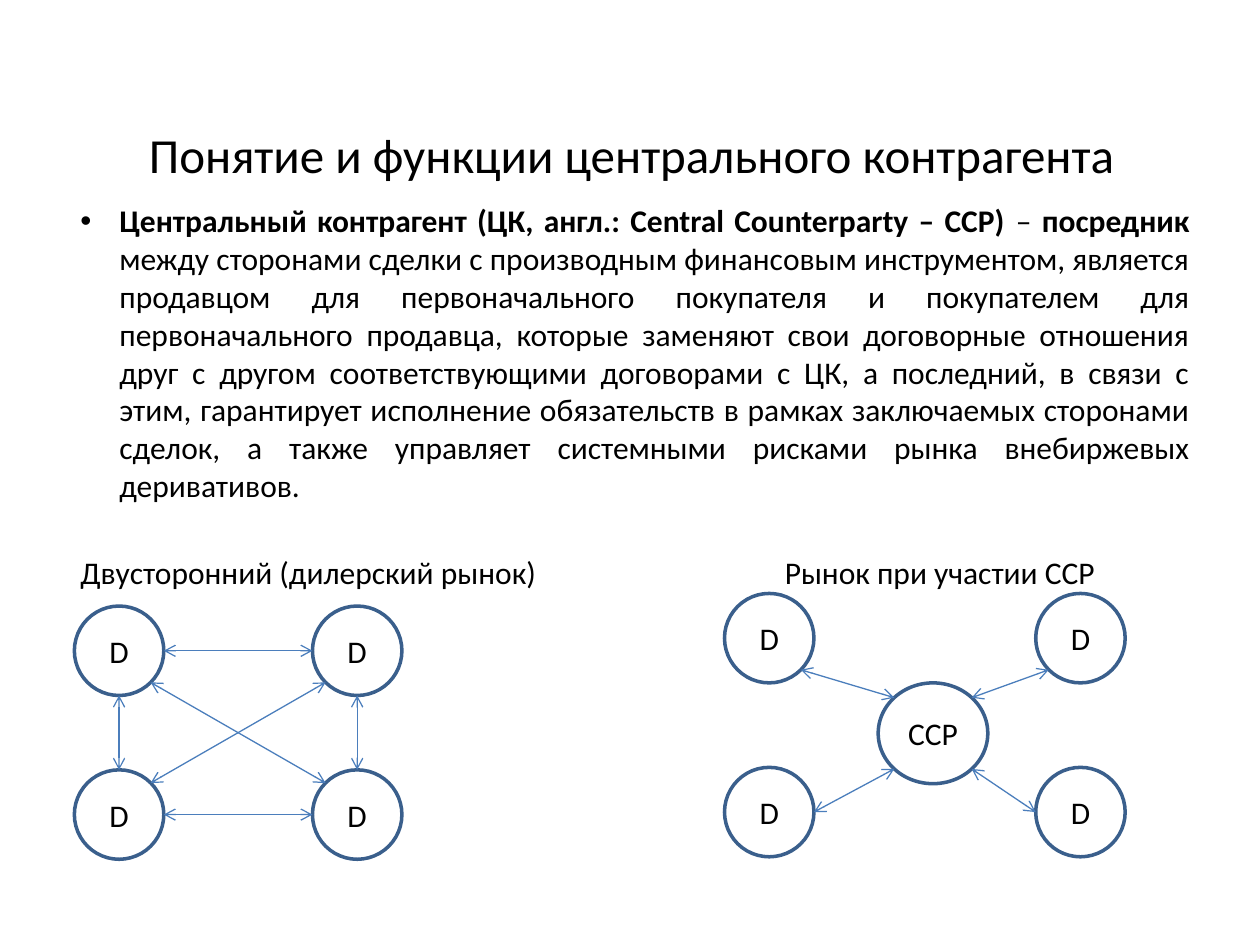
from lxml import etree
from pptx import Presentation
from pptx.dml.color import RGBColor
from pptx.enum.shapes import MSO_CONNECTOR, MSO_SHAPE
from pptx.enum.text import MSO_ANCHOR, PP_ALIGN
from pptx.oxml.ns import qn
from pptx.util import Inches, Pt

TITLE_ONLY = 5
STRAIGHT = MSO_CONNECTOR.STRAIGHT
OVAL = MSO_SHAPE.OVAL
MIDDLE = MSO_ANCHOR.MIDDLE
CENTER, JUSTIFY, LEFT = PP_ALIGN.CENTER, PP_ALIGN.JUSTIFY, PP_ALIGN.LEFT

FONT = "Calibri"
COLORS = {"text": "000000", "fill": "FFFFFF", "outline": "3A5F8C", "arrow": "4B7EBC"}
DEALER_SIZE = 0.71
DIAGONAL = 0.5 ** 0.5

DEFINITION = [
    ("Центральный контрагент (ЦК, англ.: Central Counterparty – CCP) ", True),
    ("– ", False),
    ("посредник", True),
    (" между сторонами сделки с производным финансовым инструментом, "
     "является продавцом для первоначального покупателя и покупателем для "
     "первоначального продавца, которые заменяют свои договорные отношения "
     "друг с другом соответствующими договорами с ЦК, а последний, в связи с "
     "этим, гарантирует исполнение обязательств в рамках заключаемых сторонами "
     "сделок, а также управляет системными рисками рынка внебиржевых "
     "деривативов.", False),
]
MARKET_HEADINGS = "Двусторонний (дилерский рынок)\tРынок при участии CCP"


def color(name):
    return RGBColor.from_string(COLORS[name])


def format_font(font, size, bold=False):
    font.name = FONT
    font.size = Pt(size)
    font.bold = bold
    font.color.rgb = color("text")


def set_title(slide, text):
    title = slide.shapes.title
    title.left, title.top = Inches(0.51), Inches(0.6)
    title.width, title.height = Inches(9), Inches(1.25)
    frame = title.text_frame
    frame.text = text
    frame.vertical_anchor = MIDDLE
    paragraph = frame.paragraphs[0]
    paragraph.alignment = CENTER
    format_font(paragraph.runs[0].font, 28)


def add_bullet(paragraph, indent):
    properties = paragraph._p.get_or_add_pPr()
    properties.set("marL", str(Inches(indent)))
    properties.set("indent", str(-Inches(indent)))
    etree.SubElement(properties, qn("a:buFont"), typeface="Arial")
    etree.SubElement(properties, qn("a:buChar"), char="•")


def add_tab_stop(paragraph, position):
    tabs = etree.SubElement(paragraph._p.get_or_add_pPr(), qn("a:tabLst"))
    etree.SubElement(tabs, qn("a:tab"), pos=str(Inches(position)), algn="l")


def add_body(slide):
    box = slide.shapes.add_textbox(Inches(0.54), Inches(1.55), Inches(9), Inches(5.83))
    frame = box.text_frame
    frame.word_wrap = True
    definition = frame.paragraphs[0]
    add_bullet(definition, 0.31)
    definition.alignment = JUSTIFY
    for text, bold in DEFINITION:
        run = definition.add_run()
        run.text = text
        format_font(run.font, 18, bold)

    headings = frame.add_paragraph()
    headings.text = MARKET_HEADINGS
    add_tab_stop(headings, 5.59)
    headings.alignment = LEFT
    headings.space_before = Pt(28)
    for run in headings.runs:
        format_font(run.font, 18)


def add_node(slide, text, left, top, width=DEALER_SIZE, height=DEALER_SIZE):
    node = slide.shapes.add_shape(OVAL, Inches(left), Inches(top), Inches(width), Inches(height))
    node.shadow.inherit = False
    node.fill.solid()
    node.fill.fore_color.rgb = color("fill")
    node.line.color.rgb = color("outline")
    node.line.width = Pt(2)
    frame = node.text_frame
    frame.margin_left = frame.margin_right = 0
    frame.vertical_anchor = MIDDLE
    frame.text = text
    paragraph = frame.paragraphs[0]
    paragraph.alignment = CENTER
    format_font(paragraph.runs[0].font, 18)
    return node


def add_dealers(slide, lefts, tops):
    return [add_node(slide, "D", left, top) for top in tops for left in lefts]


def edge_point(node, horizontal, vertical):
    scale = DIAGONAL if horizontal and vertical else 1
    x = node.left + node.width / 2 * (1 + horizontal * scale)
    y = node.top + node.height / 2 * (1 + vertical * scale)
    return int(x), int(y)


def add_arrow(slide, start_node, start_side, end_node, end_side):
    start = edge_point(start_node, *start_side)
    end = edge_point(end_node, *end_side)
    arrow = slide.shapes.add_connector(STRAIGHT, *start, *end)
    arrow.line.color.rgb = color("arrow")
    arrow.line.width = Pt(0.75)
    line = arrow.line._get_or_add_ln()
    for tag in ("a:headEnd", "a:tailEnd"):
        etree.SubElement(line, qn(tag), type="arrow")
    etree.SubElement(arrow._element.spPr, qn("a:effectLst"))


def add_bilateral_market(slide):
    dealers = add_dealers(slide, (0.59, 2.48), (4.81, 6.11))
    top_left, top_right, bottom_left, bottom_right = dealers
    for start, end, (horizontal, vertical) in (
        (top_left, top_right, (1, 0)),
        (top_right, bottom_right, (0, 1)),
        (bottom_left, bottom_right, (1, 0)),
        (top_left, bottom_left, (0, 1)),
        (bottom_left, top_right, (1, -1)),
        (top_left, bottom_right, (1, 1)),
    ):
        add_arrow(slide, start, (horizontal, vertical), end, (-horizontal, -vertical))


def add_ccp_market(slide):
    dealers = add_dealers(slide, (5.75, 8.22), (4.71, 6.09))
    ccp = add_node(slide, "CCP", 6.97, 5.42, 0.87, 0.8)
    ccp_sides = ((-1, -1), (1, -1), (-1, 1), (1, 1))
    dealer_sides = ((1, 1), (-1, 1), (1, 0), (-1, 0))
    for dealer, ccp_side, dealer_side in zip(dealers, ccp_sides, dealer_sides):
        add_arrow(slide, ccp, ccp_side, dealer, dealer_side)


def main():
    presentation = Presentation()
    presentation.slide_width = Inches(10)
    presentation.slide_height = Inches(7.5)
    slide = presentation.slides.add_slide(presentation.slide_layouts[TITLE_ONLY])
    set_title(slide, "Понятие и функции центрального контрагента")
    add_body(slide)
    add_bilateral_market(slide)
    add_ccp_market(slide)
    presentation.save("out.pptx")


if __name__ == "__main__":
    main()
